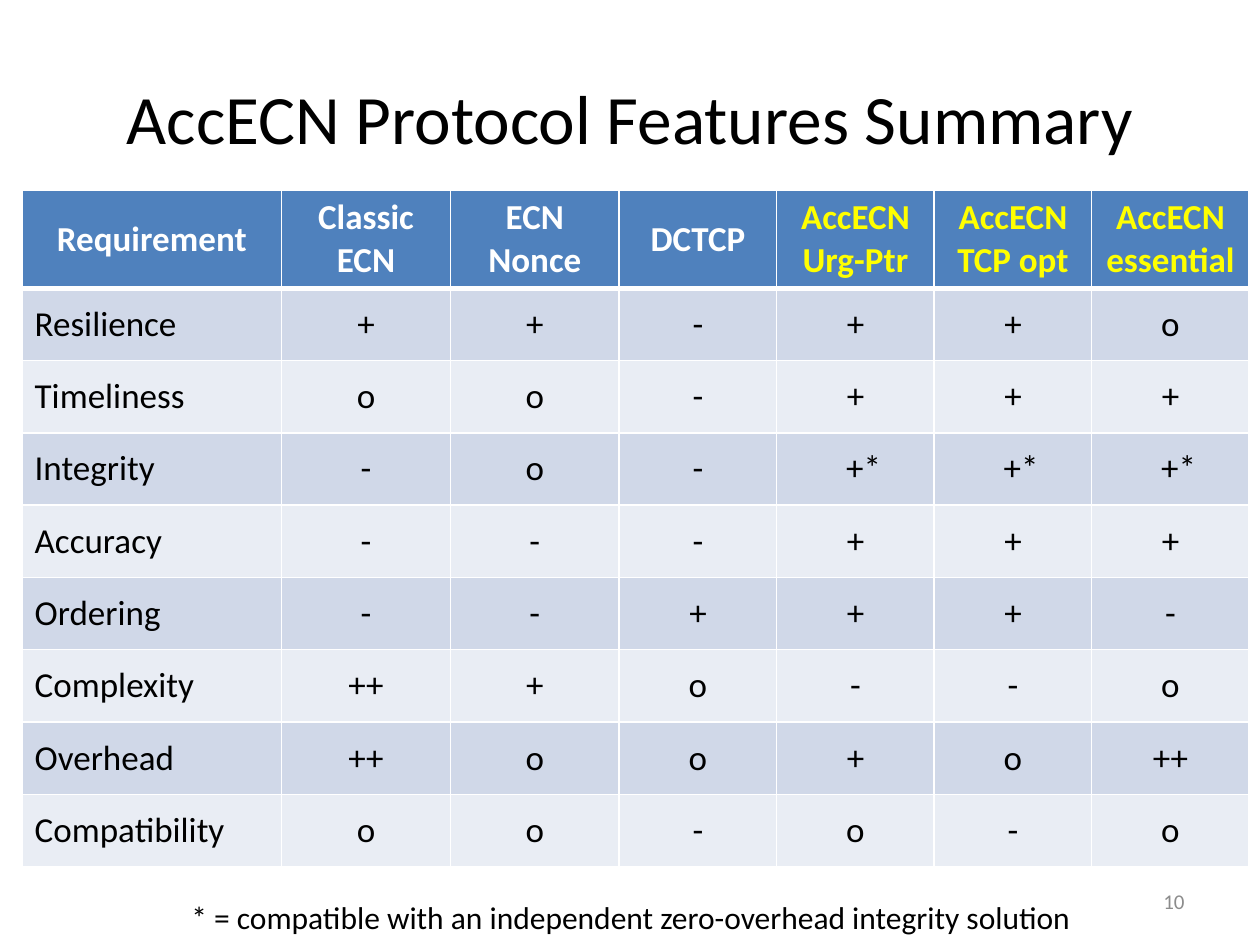
import pptx
import pptx.dml.color
import pptx.enum.text
import pptx.oxml
import pptx.oxml.ns
import pptx.util

ALIGN = pptx.enum.text.PP_ALIGN
ANCHOR = pptx.enum.text.MSO_ANCHOR
FIT = pptx.enum.text.MSO_AUTO_SIZE

deck = pptx.Presentation()
deck.slide_width, deck.slide_height = pptx.util.Inches(10), pptx.util.Inches(7.5)


def area(left, top, width, height):
    """Turn percentages of the slide into lengths."""
    sides = (deck.slide_width, deck.slide_height) * 2
    return [pptx.util.Emu(round(share * side / 100))
            for share, side in zip((left, top, width, height), sides)]


def write(frame, words, size, colour, align=ALIGN.CENTER, bold=False):
    line = frame.paragraphs[0]
    line.text = words
    line.alignment = align
    for run in line.runs:
        font_values = {"name": "Calibri", "size": pptx.util.Pt(size), "bold": bold}
        for key, value in font_values.items():
            setattr(run.font, key, value)
        run.font.color.rgb = pptx.dml.color.RGBColor.from_string(colour)


slide = deck.slides.add_slide(deck.slide_layouts[5])

# Title
heading = slide.shapes.title
title_area = area(5, 4, 90, 16.67)
for key, value in zip(("left", "top", "width", "height"), title_area):
    setattr(heading, key, value)
for key, value in {"vertical_anchor": ANCHOR.MIDDLE, "auto_size": FIT.NONE}.items():
    setattr(heading.text_frame, key, value)
write(heading.text_frame, "AccECN Protocol Features Summary", 39.6, "000000")

# Feature comparison
schemes = ["Requirement", "Classic ECN", "ECN Nonce", "DCTCP",
           "AccECN\nUrg-Ptr", "AccECN\nTCP opt", "AccECN\nessential"]
ratings = {
    "Resilience": "+ + - + + o",
    "Timeliness": "o o - + + +",
    "Integrity": "- o - +* +* +*",
    "Accuracy": "- - - + + +",
    "Ordering": "- - + + + -",
    "Complexity": "++ + o - - o",
    "Overhead": "++ o o + o ++",
    "Compatibility": "o o - o - o",
}
rows = [schemes] + [[name] + marks.split() for name, marks in ratings.items()]
column_shares = [20.6] + [13.4] * 2 + [12.5] * 4
row_shares = [10.27] + [7.65] * len(ratings)

features = slide.shapes.add_table(
    len(rows), len(schemes),
    *area(1.75, 20.1, sum(column_shares), sum(row_shares))).table
for column, share in zip(features.columns, column_shares):
    column.width = area(0, 0, share, 0)[2]
for row, share in zip(features.rows, row_shares):
    row.height = area(0, 0, 0, share)[3]

for r, entries in enumerate(rows):
    header = r == 0
    band = "4F81BD" if header else ("E9EDF4", "D0D8E8")[r % 2]
    for c, entry in enumerate(entries):
        cell = features.cell(r, c)
        cell.vertical_anchor = ANCHOR.MIDDLE
        cell.fill.solid()
        cell.fill.fore_color.rgb = pptx.dml.color.RGBColor.from_string(band)
        if entry.endswith("*"):
            cell.margin_left = pptx.util.Inches(0.23)
        if header:
            ink = "FFFF00" if entry.startswith("AccECN") else "FFFFFF"
        else:
            ink = "000000"
        align = ALIGN.LEFT if c == 0 and not header else ALIGN.CENTER
        write(cell.text_frame, entry, 20, ink, align, bold=header)

        borders = {"lnL": 1, "lnR": 1, "lnT": 3 if r == 1 else 1, "lnB": 3 if header else 1}
        properties = cell._tc.get_or_add_tcPr()
        for place, (edge, points) in enumerate(borders.items()):
            properties.insert(place, pptx.oxml.parse_xml(
                f'<a:{edge} {pptx.oxml.ns.nsdecls("a")} w="{pptx.util.Pt(points)}">'
                f'<a:solidFill><a:srgbClr val="FFFFFF"/></a:solidFill></a:{edge}>'))

# Footnote and slide number
footnote = slide.shapes.add_textbox(*area(14.2, 94.4, 72.1, 5.33)).text_frame
for key, value in {"word_wrap": False, "auto_size": FIT.SHAPE_TO_FIT_TEXT}.items():
    setattr(footnote, key, value)
write(footnote, "* = compatible with an independent zero-overhead integrity solution",
      18, "000000", ALIGN.LEFT)

page = slide.shapes.add_textbox(*area(71.7, 92.67, 23.3, 5.33)).text_frame
for key, value in {"word_wrap": True, "vertical_anchor": ANCHOR.MIDDLE}.items():
    setattr(page, key, value)
write(page, "10", 12, "8C8C8C", ALIGN.RIGHT)

deck.save("out.pptx")
